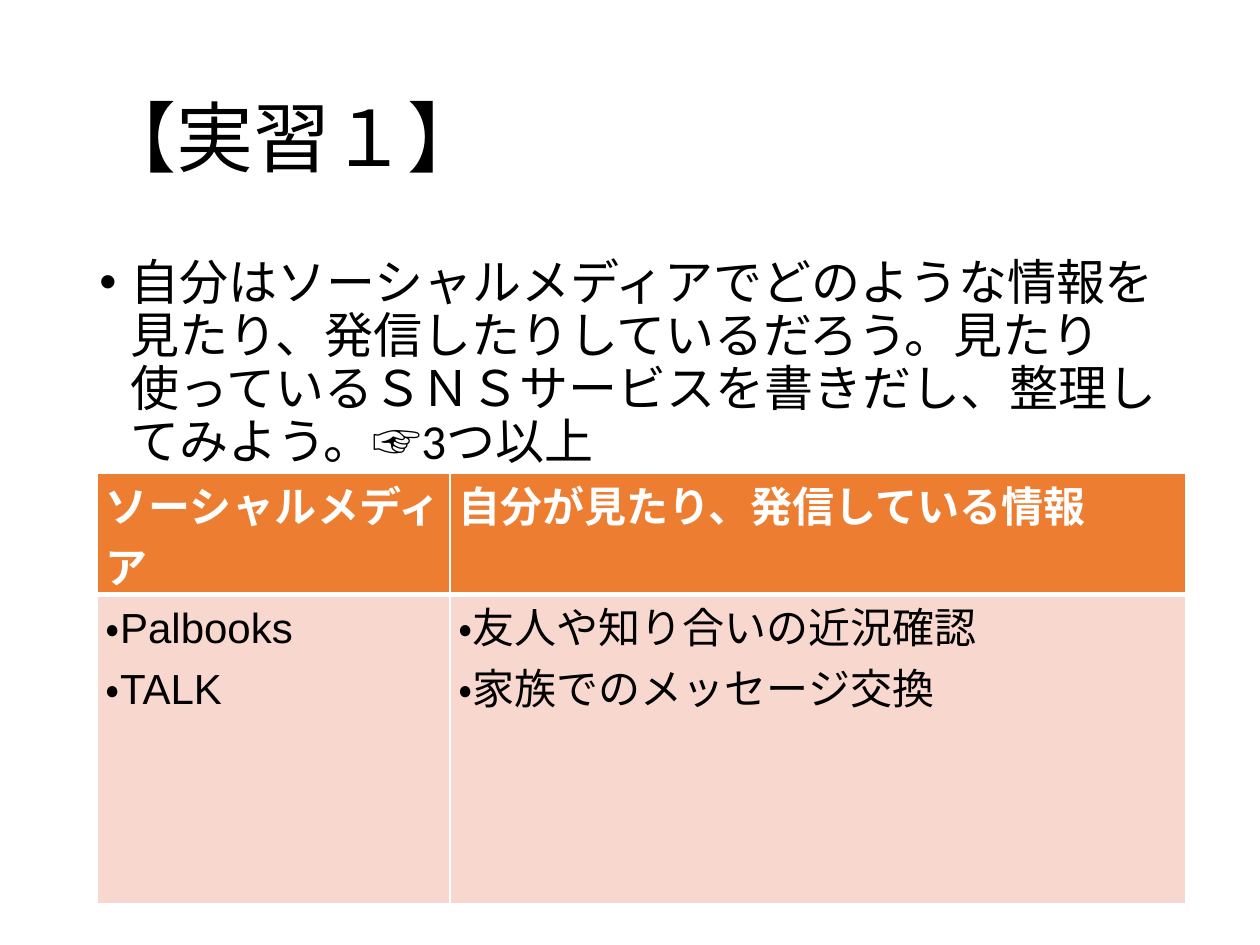
import pptx
import pptx.util
import pptx.oxml
import pptx.dml.color
import pptx.enum.text
import pptx.enum.lang

Inches = pptx.util.Inches
Pt = pptx.util.Pt
RGBColor = pptx.dml.color.RGBColor
Align = pptx.enum.text.PP_ALIGN
Anchor = pptx.enum.text.MSO_ANCHOR

BLACK = RGBColor(0x00, 0x00, 0x00)
WHITE = RGBColor(0xFF, 0xFF, 0xFF)
ORANGE = RGBColor(0xED, 0x7D, 0x31)
PINK = RGBColor(0xF8, 0xD7, 0xCE)
NAMESPACE = 'xmlns:a="http://schemas.openxmlformats.org/drawingml/2006/main"'

TITLE = "【実習１】"
TASK = (
    "自分はソーシャルメディアでどのような情報を見たり、発信したりしているだろう。"
    "見たり使っているＳＮＳサービスを書きだし、整理してみよう。☞3つ以上"
)
ROWS = [
    [["ソーシャルメディア"], ["自分が見たり、発信している情報"]],
    [["・Palbooks", "・TALK"], ["・友人や知り合いの近況確認", "・家族でのメッセージ交換"]],
]
COLUMN_WIDTHS = [2.8, 5.84]
ROW_HEIGHTS = [0.96, 2.45]

TITLE_FONT = {"size": Pt(44), "name": "Calibri"}
TASK_FONT = {"size": Pt(28), "name": "Calibri"}
ROW_STYLES = [
    {"fill": ORANGE, "color": WHITE, "font": {"size": Pt(24), "name": "Calibri", "bold": True},
     "borders": {"lnL": 1, "lnR": 1, "lnT": 1, "lnB": 3}},
    {"fill": PINK, "color": BLACK, "font": {"size": Pt(24), "name": "Arial", "bold": False},
     "borders": {"lnL": 1, "lnR": 1, "lnT": 3, "lnB": 1}},
]


def apply(target, values):
    for name, value in values.items():
        setattr(target, name, value)


def write(frame, lines, font, color, **layout):
    for index, line in enumerate(lines):
        para = frame.add_paragraph() if index else frame.paragraphs[0]
        apply(para, layout)
        span = para.add_run()
        span.text = line
        apply(span.font, {**font, "language_id": pptx.enum.lang.MSO_LANGUAGE_ID.JAPANESE})
        span.font.color.rgb = color


def place(shape, left, top, width, height):
    apply(shape, {"left": Inches(left), "top": Inches(top),
                  "width": Inches(width), "height": Inches(height)})


def add_bullet(para, indent):
    properties = para._p.get_or_add_pPr()
    properties.set("marL", str(Inches(indent)))
    properties.set("indent", str(Inches(-indent)))
    for tag in ('buFont {} typeface="Arial"', 'buChar {} char="•"'):
        properties.append(pptx.oxml.parse_xml(f"<a:{tag.format(NAMESPACE)}/>"))


def add_borders(cell, widths):
    properties = cell._tc.get_or_add_tcPr()
    for side, width in widths.items():
        properties.append(pptx.oxml.parse_xml(
            f'<a:{side} {NAMESPACE} w="{Pt(width)}"><a:solidFill>'
            f'<a:srgbClr val="{WHITE}"/></a:solidFill></a:{side}>'))


def add_table(page):
    table = page.shapes.add_table(
        len(ROWS), len(COLUMN_WIDTHS), Inches(0.77), Inches(3.76),
        Inches(sum(COLUMN_WIDTHS)), Inches(sum(ROW_HEIGHTS))).table
    for column, width in zip(table.columns, COLUMN_WIDTHS):
        column.width = Inches(width)
    for row, height, texts, style in zip(table.rows, ROW_HEIGHTS, ROWS, ROW_STYLES):
        row.height = Inches(height)
        for cell, lines in zip(row.cells, texts):
            apply(cell, {"margin_left": Inches(0.07), "margin_right": Inches(0.07),
                         "margin_top": 0, "margin_bottom": 0,
                         "vertical_anchor": Anchor.TOP})
            add_borders(cell, style["borders"])
            cell.fill.solid()
            cell.fill.fore_color.rgb = style["fill"]
            write(cell.text_frame, lines, style["font"], style["color"],
                  alignment=Align.JUSTIFY)


def main():
    deck = pptx.Presentation()
    apply(deck, {"slide_width": Inches(10), "slide_height": Inches(7.5)})
    page = deck.slides.add_slide(deck.slide_layouts[5])

    title = page.shapes.title
    place(title, 0.69, 0.4, 8.62, 1.45)
    title.text_frame.vertical_anchor = Anchor.MIDDLE
    write(title.text_frame, [TITLE], TITLE_FONT, BLACK,
          alignment=Align.LEFT, line_spacing=0.9)

    task = page.shapes.add_textbox(Inches(0.69), Inches(2), Inches(8.87), Inches(1.44))
    task.text_frame.word_wrap = True
    write(task.text_frame, [TASK], TASK_FONT, BLACK,
          line_spacing=0.9, space_before=Pt(10))
    add_bullet(task.text_frame.paragraphs[0], 0.25)

    add_table(page)
    deck.save("out.pptx")


if __name__ == "__main__":
    main()
